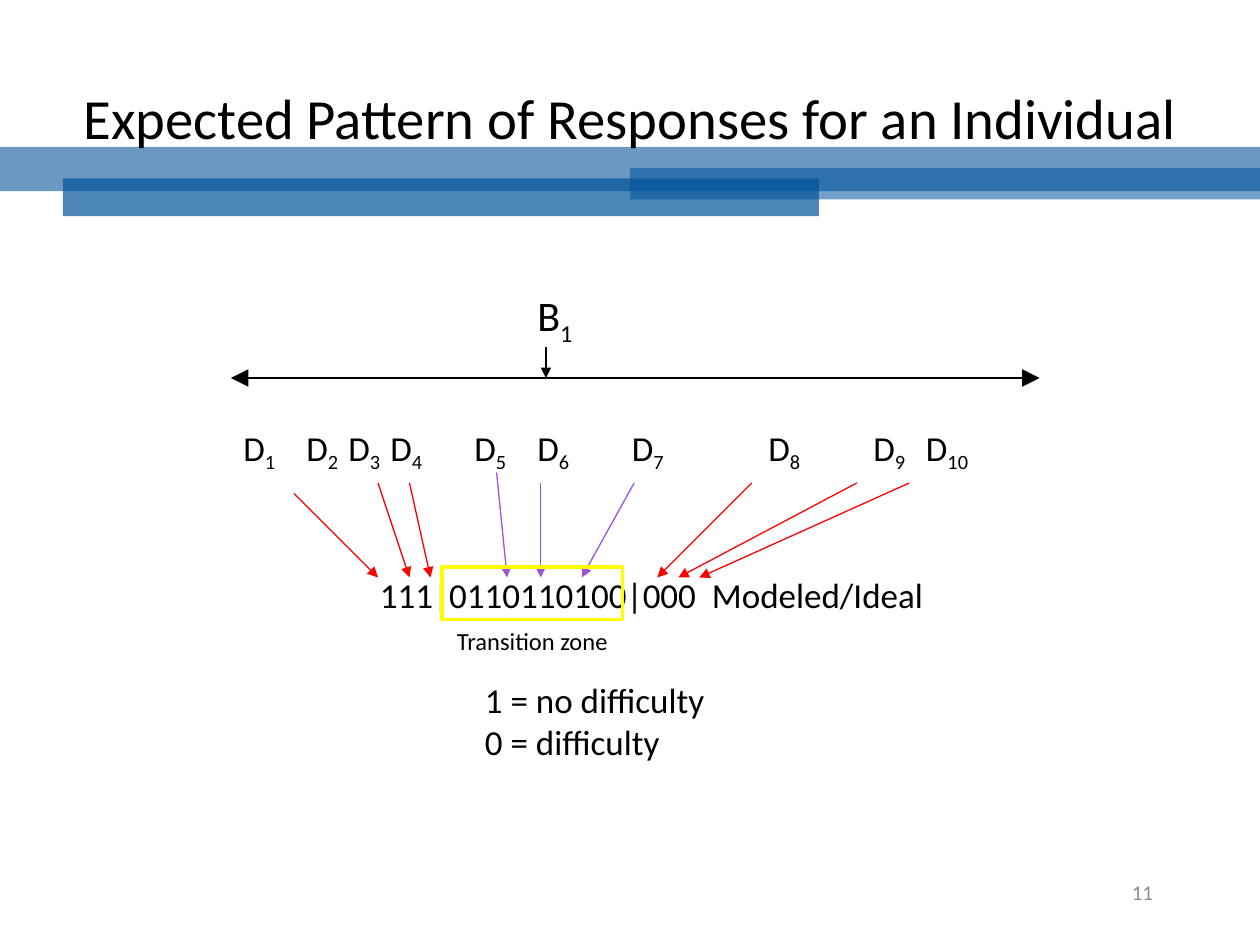
from lxml.etree import SubElement
from pptx import Presentation
from pptx.dml.color import RGBColor
from pptx.enum.shapes import MSO_CONNECTOR, MSO_SHAPE
from pptx.enum.text import MSO_ANCHOR, PP_ALIGN
from pptx.oxml.ns import qn
from pptx.util import Inches, Pt

deck = Presentation()
deck.slide_width, deck.slide_height = Inches(10), Inches(7.5)
slide = deck.slides.add_slide(deck.slide_layouts[6])
shapes = slide.shapes

# The grid has 120 columns and 90 rows; all lengths below count its cells.
CELL = deck.slide_width / 120
rgb = RGBColor.from_string


def write(box, lines, size, hue="000000", align=PP_ALIGN.LEFT,
          anchor=MSO_ANCHOR.TOP, wrap=True):
    """Add a text box; each line is a (text, subscript) pair."""
    frame = shapes.add_textbox(*(round(n * CELL) for n in box)).text_frame
    for key, val in {"word_wrap": wrap, "vertical_anchor": anchor}.items():
        setattr(frame, key, val)
    for i, line in enumerate(lines):
        para = frame.add_paragraph() if i else frame.paragraphs[0]
        para.alignment = align
        for part, shift in zip(line, (None, "-25000")):
            if not part:
                continue
            run = para.add_run()
            run.text = part
            for key, val in {"name": "Calibri", "size": Pt(size)}.items():
                setattr(run.font, key, val)
            run.font.color.rgb = rgb(hue)
            if shift:
                run.font._element.set("baseline", shift)


def arrow(x1, y1, x2, y2, hue, ends=("tailEnd",), size="med"):
    line = shapes.add_connector(
        MSO_CONNECTOR.STRAIGHT, *(round(n * CELL) for n in (x1, y1, x2, y2)))
    line.line.width = Pt(0.75)
    line.line.color.rgb = rgb(hue)
    for end in ends:
        SubElement(line.line._ln, qn("a:" + end), type="triangle", w=size, len=size)
    SubElement(line._element.spPr, qn("a:effectLst"))


# Bands behind the title
for box, hue, alpha in (
    ((0, 14, 120, 4.2), "6C99C3", 100),
    ((6, 17, 72, 3.6), "00539B", 70),
    ((60, 16, 60, 3), "00539B", 55),
):
    band = shapes.add_shape(MSO_SHAPE.RECTANGLE, *(round(n * CELL) for n in box))
    band.shadow.inherit = False
    band.line.fill.background()
    band.fill.solid()
    band.fill.fore_color.rgb = rgb(hue)
    if alpha < 100:
        tint = band._element.spPr.find(".//" + qn("a:srgbClr"))
        SubElement(tint, qn("a:alpha"), val=str(alpha * 1000))

write((6, 3.6, 108, 15), [("Expected Pattern of Responses for an Individual", "")],
      32.4, align=PP_ALIGN.CENTER, anchor=MSO_ANCHOR.MIDDLE)
write((86, 82, 25, 6), [("11", "")], 12, "8C8C8C", PP_ALIGN.RIGHT, MSO_ANCHOR.MIDDLE)

# Scale with the person above and the items below
arrow(22, 36, 99, 36, "000000", ("headEnd", "tailEnd"), "lg")
write((50, 27, 6, 6), [("B", "1")], 24, wrap=False)
arrow(52, 33, 52, 36, "000000")
for i, left in enumerate((22, 28, 32, 36, 44, 50, 59, 72, 82, 87), 1):
    write((left, 40, 9 if i == 10 else 8, 5.3), [("D", str(i))], 20)

# Response string and its key
write((35, 54, 54.6, 5.3), [("111|0110110100|000  Modeled/Ideal", "")], 20, wrap=False)
write((45, 64, 39, 9.2), [("1 = no difficulty", ""), ("0 = difficulty", "")], 20)

# Arrows from items to responses: start column, start row, end column
for hue, rays in {
    "FF0000": ((28, 47, 36), (36, 46, 39), (39, 46, 41),
               (71.6, 46, 62.6), (81.6, 46, 64.6), (86.6, 46, 66.6)),
    "9B57D3": ((47.3, 45, 48.3), (51.5, 46, 51.5), (60.4, 46, 55.4)),
}.items():
    for x1, y1, x2 in rays:
        arrow(x1, y1, x2, 55, hue)

# Transition zone
zone = shapes.add_shape(MSO_SHAPE.RECTANGLE,
                        *(round(n * CELL) for n in (42.1, 54, 17.2, 5)))
zone.shadow.inherit = False
zone.fill.background()
zone.line.width = Pt(2)
zone.line.color.rgb = rgb("FFFF00")
write((41.2, 59, 19, 4), [("Transition zone", "")], 14, align=PP_ALIGN.CENTER)

deck.save("out.pptx")
